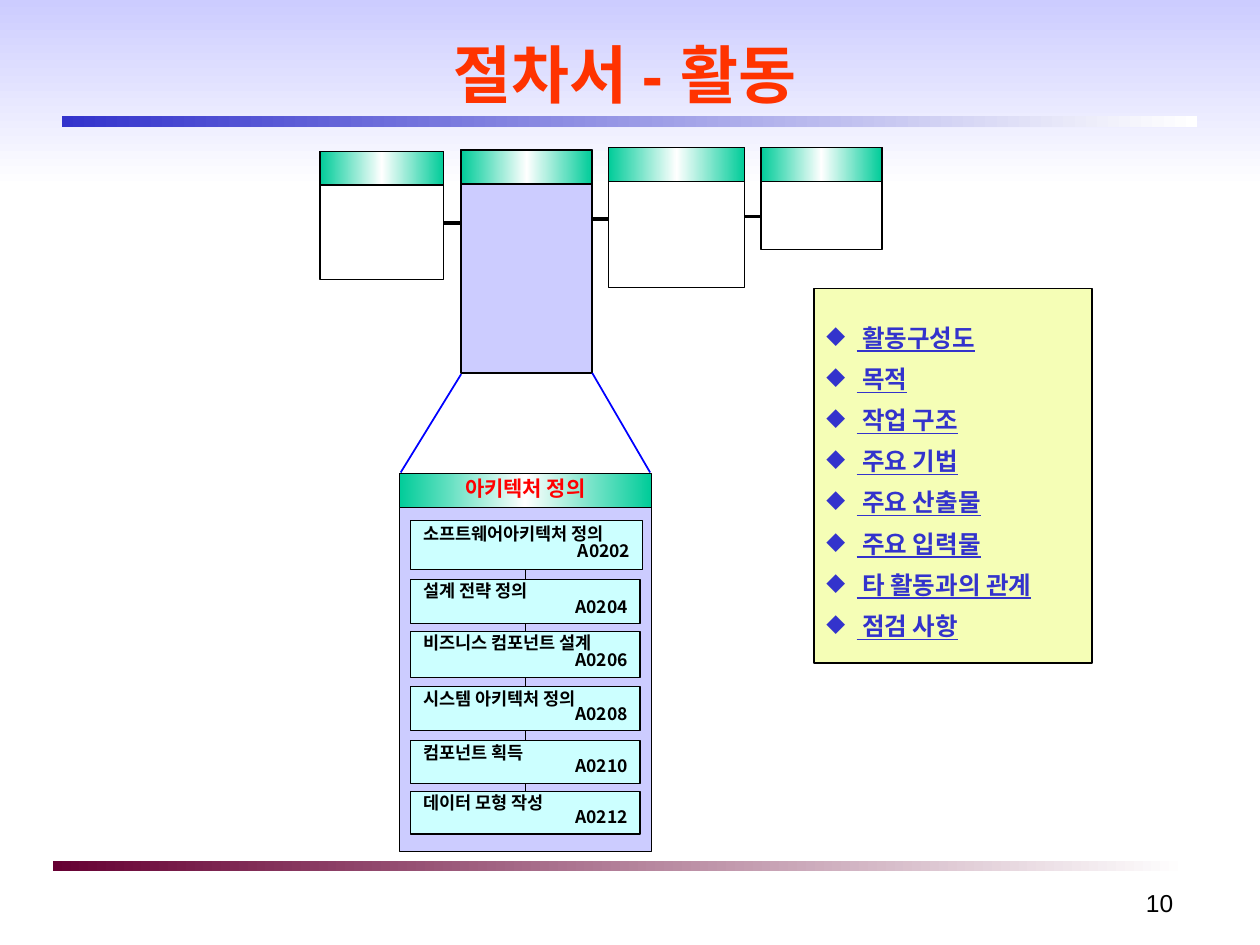
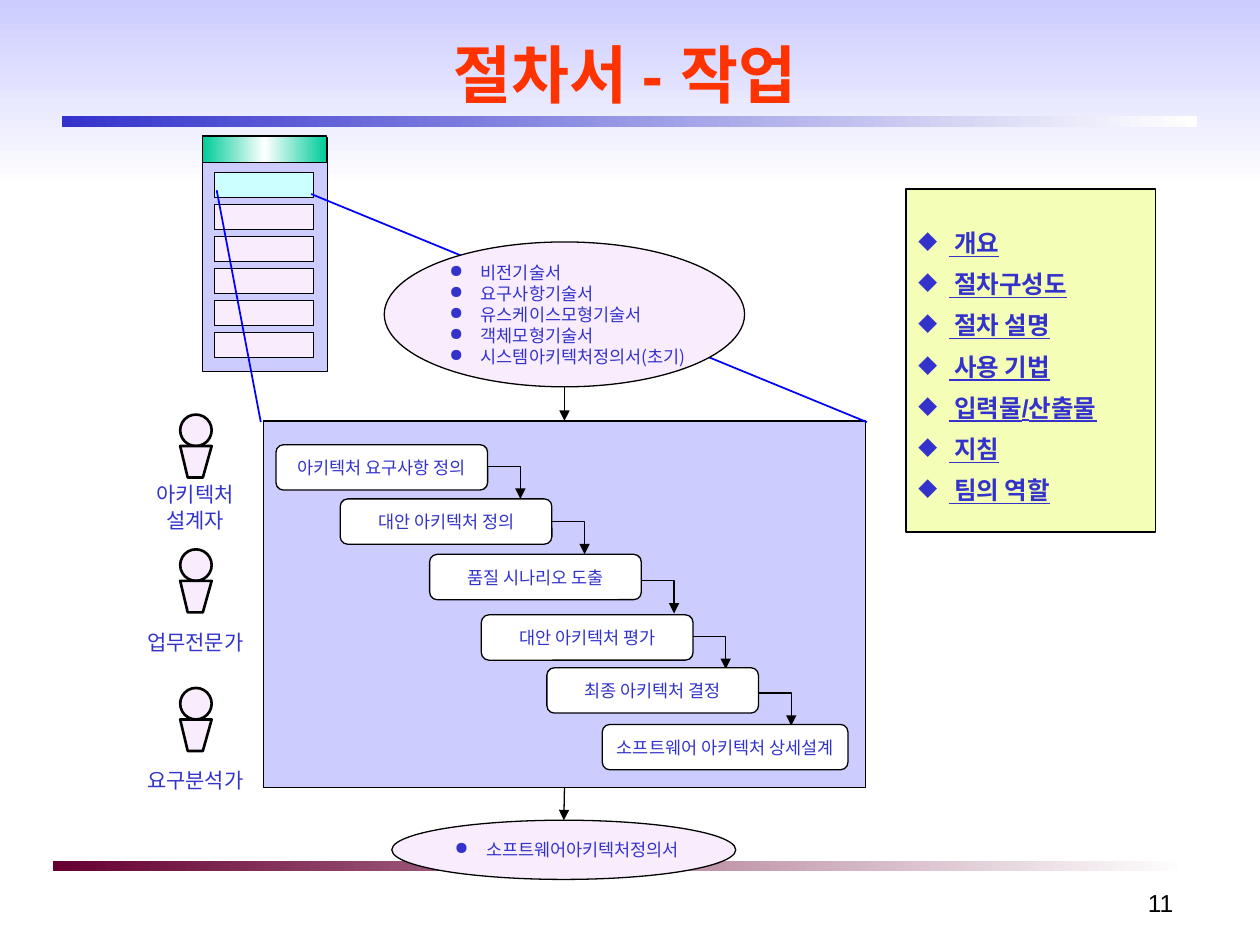
"""Build two slides on the procedure manual: its activities and its tasks."""
from itertools import cycle

from lxml import etree
from pptx import Presentation
from pptx import util as u
from pptx.dml.color import RGBColor
from pptx.enum import shapes as kinds, text as txt
from pptx.oxml import ns

COLORS = {
    "lavender": "CCCCFF", "white": "FFFFFF", "wine": "660033", "blue": "3333CC",
    "line": "0000FF", "title": "FF3300", "red": "FF0000", "black": "000000",
    "green": "00CC99", "cyan": "CCFFFF", "lilac": "F9EDFD", "yellow": "F5FEB6",
}
KOREAN = "Noto Sans CJK KR"
HEADER = ("green", "white", "green")
BANDS = [
    ((0, 0, 10, 1.5), ("lavender", "white"), 270),
    ((0.42, 6.83, 9, 0.08), ("wine", "white"), 0),
    ((0.49, 0.92, 9.01, 0.09), ("blue", "white"), 0),
]

ACTIVITY = {
    "title": "절차서 - 활동",
    "number": "10",
    "topics": ["활동구성도", "목적", "작업 구조", "주요 기법", "주요 산출물",
               "주요 입력물", "타 활동과의 관계", "점검 사항"],
    "topics_at": (6.46, 2.29, 2.21, 2.97),
}
PHASES = [
    (2.54, 1.2, 0.98, 1.02, None),
    (3.66, 1.19, 1.04, 1.77, "lavender"),
    (4.83, 1.17, 1.08, 1.11, None),
    (6.04, 1.17, 0.96, 0.81, None),
]
PHASE_LINKS_Y = [1.77, 1.74, 1.72]
PHASE_NAME = "아키텍처 정의"
TASKS = [
    ("소프트웨어아키텍처 정의", "A0202", 4.13, 1.84, 0.39, (0.82, 0.82)),
    ("설계 전략 정의", "A0204", 4.6, 1.82, 0.35, (0.72, 0.72)),
    ("비즈니스 컴포넌트 설계", "A0206", 5.01, 1.82, 0.37, (0.72, 0.82)),
    ("시스템 아키텍처 정의", "A0208", 5.45, 1.82, 0.35, (0.72, 0.72)),
    ("컴포넌트 획득", "A0210", 5.88, 1.82, 0.34, (0.72, 0.64)),
    ("데이터 모형 작성", "A0212", 6.28, 1.82, 0.34, (0.72, 0.64)),
]

WORK = {
    "title": "절차서 - 작업",
    "number": "11",
    "topics": ["개요", "절차구성도", "절차 설명", "사용 기법", "입력물/산출물",
               "지침", "팀의 역할"],
    "topics_at": (7.19, 1.5, 1.98, 2.72),
}
INPUTS = ["비전기술서", "요구사항기술서", "유스케이스모형기술서", "객체모형기술서",
          "시스템아키텍처정의서(초기)"]
OUTPUTS = ["소프트웨어아키텍처정의서"]
ROLES = [(["아키텍처", "설계자"], 3.29), (["업무전문가"], 4.36), (["요구분석가"], 5.46)]
STEPS = [
    ("아키텍처 요구사항 정의", 2.19, 3.53, 1.68, 3.7),
    ("대안 아키텍처 정의", 2.7, 3.96, 1.68, 4.14),
    ("품질 시나리오 도출", 3.41, 4.4, 1.68, 4.61),
    ("대안 아키텍처 평가", 3.82, 4.88, 1.68, 5.05),
    ("최종 아키텍처 결정", 4.34, 5.3, 1.68, 5.5),
    ("소프트웨어 아키텍처 상세설계", 4.78, 5.75, 1.95, None),
]


def rgb(name):
    return RGBColor.from_string(COLORS[name])


def add_xml(parent, tag, **attributes):
    return etree.SubElement(parent, ns.qn(tag), attributes)


def write(shape, lines, size=10, color="blue", font=KOREAN, bold=False, underline=False,
          aligns=(txt.PP_ALIGN.LEFT,), spacing=(None,), bullet=None, indent=0.25,
          anchor=txt.MSO_ANCHOR.MIDDLE, wrap=False):
    frame = shape.text_frame
    frame.word_wrap = wrap
    frame.vertical_anchor = anchor
    for i, (line, align, gap) in enumerate(zip(lines, cycle(aligns), cycle(spacing))):
        paragraph = frame.paragraphs[0] if i == 0 else frame.add_paragraph()
        if bullet:
            props = paragraph._p.get_or_add_pPr()
            props.set("marL", str(u.Inches(indent)))
            props.set("indent", str(-u.Inches(indent)))
            add_xml(props, "a:buChar", char=bullet)
        paragraph.alignment = align
        if gap:
            paragraph.line_spacing = gap
        run = paragraph.add_run()
        run.text = line
        run.font.size = u.Pt(size)
        run.font.bold = bold
        run.font.underline = underline
        run.font.color.rgb = rgb(color)
        run.font.name = font
        add_xml(run._r.get_or_add_rPr(), "a:ea", typeface=KOREAN)


def paint(shape, fill=None, width=0.75, angle=0):
    shape.shadow.inherit = False
    if isinstance(fill, tuple):
        shape.fill.gradient()
        shape.fill.gradient_angle = angle
        stops = shape._element.spPr.find(".//" + ns.qn("a:gsLst"))
        for stop in list(stops):
            stops.remove(stop)
        for i, name in enumerate(fill):
            stop = add_xml(stops, "a:gs", pos=str(100000 * i // (len(fill) - 1)))
            add_xml(stop, "a:srgbClr", val=COLORS[name])
    elif fill:
        shape.fill.solid()
        shape.fill.fore_color.rgb = rgb(fill)
    else:
        shape.fill.background()
    if width:
        shape.line.color.rgb = rgb("black")
        shape.line.width = u.Pt(width)
    else:
        shape.line.fill.background()
    return shape


def draw(slide, box, fill=None, kind="RECTANGLE", width=0.75, angle=0):
    shape = slide.shapes.add_shape(kinds.MSO_SHAPE[kind], *map(u.Inches, box))
    return paint(shape, fill, width, angle)


def trace(slide, points, fill=None, width=0.75, close=True):
    start, *rest = [tuple(map(u.Inches, point)) for point in points]
    builder = slide.shapes.build_freeform(*start)
    builder.add_line_segments(rest, close=close)
    return paint(builder.convert_to_shape(), fill, width)


def point_arrow(line):
    add_xml(line.get_or_add_ln(), "a:tailEnd", type="triangle")


def connect(slide, start, end, color="black", width=0.75):
    link = slide.shapes.add_connector(
        kinds.MSO_CONNECTOR.STRAIGHT, *map(u.Inches, start + end))
    link.line.color.rgb = rgb(color)
    link.line.width = u.Pt(width)
    add_xml(link._element.spPr, "a:effectLst")
    return link


def start_slide(deck, layout, content):
    slide = deck.slides.add_slide(layout)
    title = slide.shapes.title
    title.left, title.top, title.width, title.height = map(u.Inches, (0.5, 0.33, 8.92, 0.5))
    write(title, [content["title"]], size=36, color="title", font="Arial", bold=True,
          aligns=[txt.PP_ALIGN.CENTER], wrap=True)
    number = slide.shapes.add_textbox(*map(u.Inches, (7.33, 7, 2.08, 0.5)))
    write(number, [content["number"]], size=14, color="black", font="Arial",
          aligns=[txt.PP_ALIGN.RIGHT], anchor=txt.MSO_ANCHOR.TOP, wrap=True)
    topics = draw(slide, content["topics_at"], "yellow", width=1)
    write(topics, [" " + topic for topic in content["topics"]], size=14, font="Arial",
          bold=True, underline=True, spacing=[1.4], bullet="◆", indent=0.24)
    return slide


def add_bands(deck, layout):
    """Move the bands to the layout, beneath everything on the slides."""
    slide = deck.slides[0]
    for box, colors, angle in BANDS:
        band = draw(slide, box, colors, width=0, angle=angle)
        layout.shapes.element.append(band._element)


def build_activity(slide):
    for x, y, w, h, fill in PHASES:
        draw(slide, (x, y, w, h), fill)
        draw(slide, (x, y, w, 0.27), HEADER)
    for left, right, y in zip(PHASES, PHASES[1:], PHASE_LINKS_Y):
        connect(slide, (left[0] + left[2], y), (right[0], y), width=2)

    draw(slide, (3.17, 4.01, 2, 2.75), "lavender")
    connect(slide, (4.17, 4.49), (4.17, 6.35))
    phase = draw(slide, (3.17, 3.76, 2, 0.27), HEADER)
    write(phase, [PHASE_NAME], size=12, color="red", bold=True, spacing=[0.8],
          aligns=[txt.PP_ALIGN.CENTER], anchor=txt.MSO_ANCHOR.TOP, wrap=True)
    for name, code, y, w, h, spacing in TASKS:
        task = draw(slide, (3.26, y, w, h), "cyan")
        write(task, [name, code], color="black", bold=True, spacing=spacing,
              aligns=[txt.PP_ALIGN.JUSTIFY, txt.PP_ALIGN.RIGHT],
              anchor=txt.MSO_ANCHOR.TOP, wrap=True)
    connect(slide, (3.66, 2.97), (3.18, 3.75), "line", 1)
    connect(slide, (4.7, 2.96), (5.16, 3.75), "line", 1)


def build_work(slide):
    process = draw(slide, (2.09, 3.34, 4.78, 2.91), "lavender")
    for names, y in ROLES:
        draw(slide, (1.43, y, 0.25, 0.25), "lilac", "OVAL", 1.5)
        trace(slide, [(1.43, y + 0.25), (1.49, y + 0.5), (1.61, y + 0.5),
                      (1.68, y + 0.25)], "lilac", 1.5)
        role = draw(slide, (1.04, y + 0.55, 1.02, 0.37), None, "ROUNDED_RECTANGLE", 0)
        write(role, names, size=12, aligns=[txt.PP_ALIGN.CENTER])

    for name, x, y, w, arrow_y in STEPS:
        step = draw(slide, (x, y, w, 0.36), "white", "ROUNDED_RECTANGLE")
        write(step, [name], aligns=[txt.PP_ALIGN.CENTER])
        if arrow_y:
            right = x + w
            point_arrow(trace(slide, [(right, arrow_y), (right + 0.26, arrow_y),
                                      (right + 0.26, arrow_y + 0.26)], close=False))

    draw(slide, (1.61, 1.09, 0.99, 1.86), "lavender")
    draw(slide, (1.61, 1.08, 0.98, 0.21), HEADER)
    for i in range(len(TASKS)):
        draw(slide, (1.7, 1.37 + 0.254 * i, 0.79, 0.2), "lilac" if i else "cyan")
    connect(slide, (1.72, 1.51), (2.07, 3.35), "line", 1)
    connect(slide, (2.47, 1.54), (6.88, 3.35), "line", 1)

    inputs = draw(slide, (3.05, 1.92, 2.86, 1.15), "lilac", "OVAL")
    write(inputs, INPUTS, bullet="●")
    outputs = draw(slide, (3.11, 6.51, 2.73, 0.47), "lilac", "OVAL")
    write(outputs, OUTPUTS, bullet="●")
    into = connect(slide, (4.48, 3.07), (4.48, 3.34))
    into.end_connect(process, 0)
    out = connect(slide, (4.48, 6.25), (4.48, 6.51))
    out.begin_connect(process, 2)
    out.end_connect(outputs, 0)
    for arrow in (into, out):
        point_arrow(arrow)


def main():
    deck = Presentation()
    deck.slide_width, deck.slide_height = u.Inches(10), u.Inches(7.5)
    layout = deck.slide_layouts[5]
    build_activity(start_slide(deck, layout, ACTIVITY))
    build_work(start_slide(deck, layout, WORK))
    add_bands(deck, layout)
    deck.save("out.pptx")


if __name__ == "__main__":
    main()
